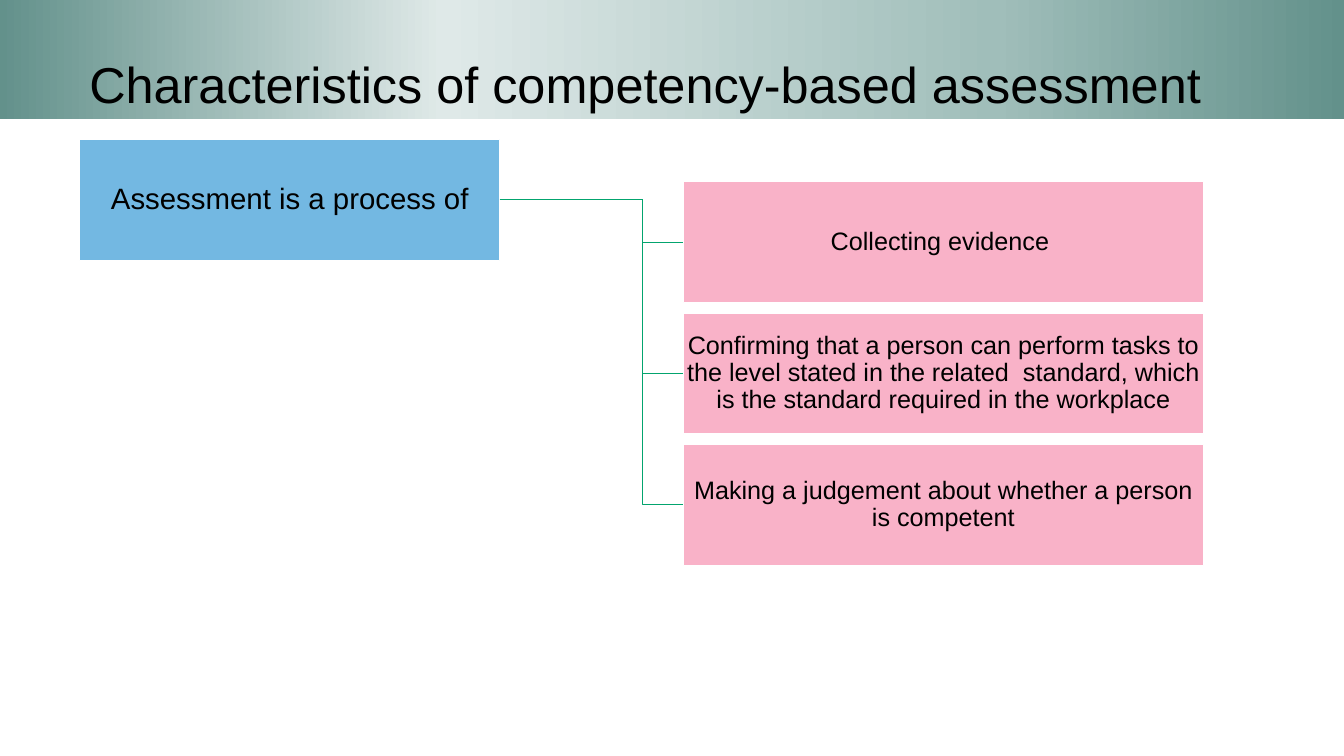
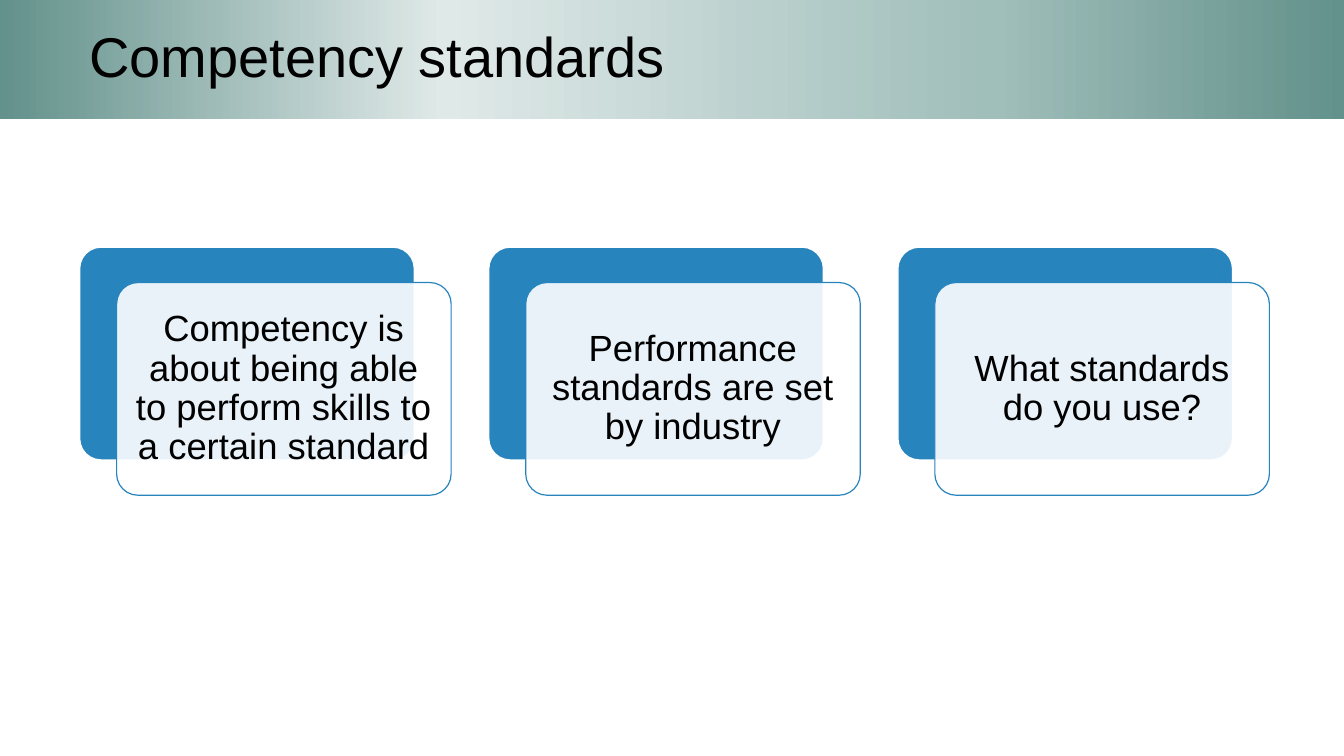
"""Build two slides on competency-based assessment."""
from lxml.etree import SubElement
from pptx import Presentation
from pptx.dml.color import RGBColor
from pptx.enum.shapes import MSO_CONNECTOR, MSO_SHAPE
from pptx.enum.text import MSO_ANCHOR as Anchor, MSO_AUTO_SIZE, PP_ALIGN as Align
from pptx.oxml.ns import qn
from pptx.util import Cm, Pt

TREE_TITLE = "Characteristics of competency-based assessment"
ROOT = "Assessment is a process of"
BRANCHES = [
    "Collecting evidence ",
    "Confirming that a person can perform tasks to the level stated in the "
    "related  standard, which is the standard required in the workplace",
    "Making a judgement about whether a person is competent",
]
CARDS_TITLE = "Competency standards"
CARDS = [
    "Competency is about being able to perform skills to a certain standard",
    "Performance standards are set by industry",
    "What standards do you use?",
]

FONT = "Arial"
BLACK, WHITE = "000000", "FFFFFF"
SKY, PINK, BLUE, GREEN = "73B8E2", "F9B2C8", "2784BD", "03A46E"
BAND_STOPS = [(0, "63918B"), (33, "DFE9E8"), (74, "A0BEBA"), (100, "63918B")]

PAGE_WIDTH, PAGE_HEIGHT = 33.87, 19.05
BAND_HEIGHT = 3
LEFT = 2.01

ROOT_TOP, ROOT_WIDTH, NODE_HEIGHT = 3.51, 10.59, 3.05
BRANCH_LEFT, BRANCH_TOP, BRANCH_WIDTH, BRANCH_STEP = 17.22, 4.58, 13.11, 3.31
BEND_PERCENT = 78

CARD_TOP, CARD_WIDTH, CARD_HEIGHT, CARD_STEP = 6.23, 8.43, 5.36, 10.31
CARD_SHIFT_X, CARD_SHIFT_Y = 0.93, 0.89


def color(value):
    return RGBColor.from_string(value)


def write(shape, text, size, align, anchor, inset):
    frame = shape.text_frame
    frame.text = text
    frame.word_wrap = True
    frame.auto_size = MSO_AUTO_SIZE.NONE
    frame.vertical_anchor = anchor
    frame.margin_left = frame.margin_right = Cm(inset)
    frame.margin_top = frame.margin_bottom = Cm(inset)
    para = frame.paragraphs[0]
    para.alignment = align
    para.line_spacing = 0.9
    font = para.runs[0].font
    font.name, font.size = FONT, Pt(size)
    font.color.rgb = color(BLACK)


def fill_band(shape):
    shape.fill.gradient()
    shape.fill.gradient_angle = 0
    stops = shape.element.spPr.find(".//" + qn("a:gsLst"))
    for stop in list(stops):
        stops.remove(stop)
    for percent, value in BAND_STOPS:
        stop = SubElement(stops, qn("a:gs"), pos=str(percent * 1000))
        SubElement(stop, qn("a:srgbClr"), val=value)


def add_page(deck, title, size, anchor):
    page = deck.slides.add_slide(deck.slide_layouts[5])
    band = page.shapes.title
    band.left, band.top = Cm(0), Cm(0)
    band.width, band.height = Cm(PAGE_WIDTH), Cm(BAND_HEIGHT)
    fill_band(band)
    write(band, title, size, Align.LEFT, anchor, 0.11)
    band.text_frame.margin_left = Cm(2.25)
    return page


def add_box(page, kind, left, top, width, height, fill, line):
    box = page.shapes.add_shape(kind, Cm(left), Cm(top), Cm(width), Cm(height))
    box.shadow.inherit = False
    box.fill.solid()
    box.fill.fore_color.rgb = color(fill)
    box.line.color.rgb = color(line)
    box.line.width = Pt(0.85)
    return box


def add_node(page, text, size, left, top, width, fill):
    node = add_box(page, MSO_SHAPE.RECTANGLE, left, top, width, NODE_HEIGHT, fill, WHITE)
    write(node, text, size, Align.CENTER, Anchor.MIDDLE, 0.03)
    return node


def join(page, root, node):
    elbow = page.shapes.add_connector(
        MSO_CONNECTOR.ELBOW,
        root.left + root.width, root.top + root.height // 2,
        node.left, node.top + node.height // 2)
    elbow.begin_connect(root, 3)
    elbow.end_connect(node, 1)
    guides = elbow.element.spPr.find(qn("a:prstGeom")).find(qn("a:avLst"))
    SubElement(guides, qn("a:gd"), name="adj1", fmla=f"val {BEND_PERCENT * 1000}")
    elbow.line.color.rgb = color(GREEN)
    elbow.line.width = Pt(0.75)
    SubElement(elbow.element.spPr, qn("a:effectLst"))


def add_tree(page):
    root = add_node(page, ROOT, 21, LEFT, ROOT_TOP, ROOT_WIDTH, SKY)
    for index, text in enumerate(BRANCHES):
        top = BRANCH_TOP + index * BRANCH_STEP
        node = add_node(page, text, 18, BRANCH_LEFT, top, BRANCH_WIDTH, PINK)
        join(page, root, node)


def add_card(page, text, left):
    back = add_box(page, MSO_SHAPE.ROUNDED_RECTANGLE, left, CARD_TOP,
                   CARD_WIDTH, CARD_HEIGHT, BLUE, WHITE)
    front = add_box(page, MSO_SHAPE.ROUNDED_RECTANGLE, left + CARD_SHIFT_X,
                    CARD_TOP + CARD_SHIFT_Y, CARD_WIDTH, CARD_HEIGHT, WHITE, BLUE)
    for box in (back, front):
        box.adjustments[0] = 0.1
    tint = front.element.spPr.find(qn("a:solidFill")).find(qn("a:srgbClr"))
    SubElement(tint, qn("a:alpha"), val="90000")
    write(front, text, 26, Align.CENTER, Anchor.MIDDLE, 0.28)


def main():
    deck = Presentation()
    deck.slide_width, deck.slide_height = Cm(PAGE_WIDTH), Cm(PAGE_HEIGHT)
    add_tree(add_page(deck, TREE_TITLE, 36, Anchor.BOTTOM))
    cards_page = add_page(deck, CARDS_TITLE, 40, Anchor.MIDDLE)
    for index, text in enumerate(CARDS):
        add_card(cards_page, text, LEFT + index * CARD_STEP)
    deck.save("out.pptx")


if __name__ == "__main__":
    main()
